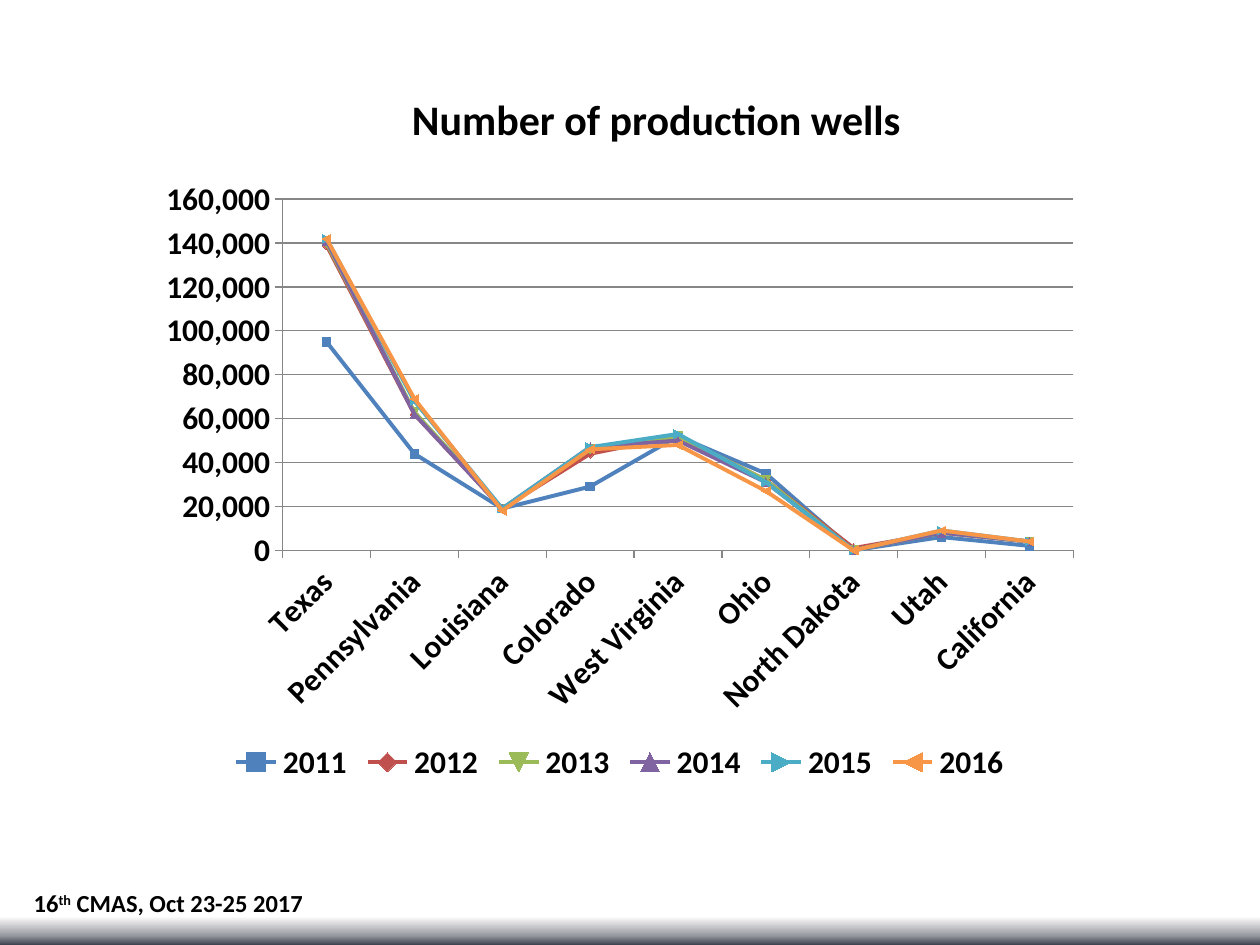
from dataclasses import dataclass

from lxml import etree
from pptx import Presentation
from pptx.chart.data import CategoryChartData
from pptx.dml.color import RGBColor
from pptx.enum.chart import XL_CHART_TYPE, XL_LEGEND_POSITION, XL_TICK_MARK
from pptx.enum.text import MSO_ANCHOR, MSO_AUTO_SIZE, PP_ALIGN
from pptx.oxml.ns import qn
from pptx.util import Cm, Pt

LINE_MARKERS = XL_CHART_TYPE.LINE_MARKERS
BOTTOM = XL_LEGEND_POSITION.BOTTOM
OUTSIDE, NO_TICK = XL_TICK_MARK.OUTSIDE, XL_TICK_MARK.NONE
MIDDLE = MSO_ANCHOR.MIDDLE
NO_FIT = MSO_AUTO_SIZE.NONE
LEFT = PP_ALIGN.LEFT

STATES = ["Texas", "Pennsylvania", "Louisiana", "Colorado", "West Virginia",
          "Ohio", "North Dakota", "Utah", "California"]
WELLS = {
    "2011": [95000, 44000, 19000, 29000, 52000, 35000, 0, 6000, 2000],
    "2012": [139000, 62000, 19000, 44000, 52000, 32000, 1000, 8000, 4000],
    "2013": [140000, 63000, 19000, 46000, 52000, 32000, 0, 8000, 4000],
    "2014": [141000, 62000, 19000, 47000, 50000, 31000, 0, 8000, 4000],
    "2015": [142000, 68000, 19000, 47000, 53000, 31000, 0, 9000, 4000],
    "2016": [142000, 69000, 18000, 46000, 48000, 27000, 0, 9000, 4000],
}


@dataclass(frozen=True)
class Theme:
    font: str = "Calibri"
    text: str = "000000"
    rule: str = "868686"
    title_size: int = 24
    chart_size: int = 18
    footer_size: int = 14
    line_width: float = 2.25
    series: tuple = ("4F81BD", "C0504D", "9BBB59", "8064A2", "4BACC6", "F79646")
    backdrop: tuple = ((0, "FFFFFF"), (93, "FFFFFF"), (97, "FEFEFE"),
                       (99, "9799A0"), (100, "3C414E"))


class Deck:
    """Holds the theme and the current slide and adds styled elements to it."""

    def __init__(self, prs, theme):
        self.theme = theme
        self.s = prs.slides.add_slide(prs.slide_layouts[5])

    def style(self, font, size):
        font.name = self.theme.font
        font.size = Pt(size)
        font.bold = True
        font.color.rgb = RGBColor.from_string(self.theme.text)

    def background(self):
        fill = self.s.background.fill
        fill.gradient()
        fill.gradient_angle = 270
        stops = next(self.s.element.iter(qn("a:gsLst")))
        for stop in list(stops):
            stops.remove(stop)
        for percent, color in self.theme.backdrop:
            stop = etree.SubElement(stops, qn("a:gs"), pos=str(percent * 1000))
            etree.SubElement(stop, qn("a:srgbClr"), val=color)

    def title(self, text, left, top, width, height):
        sp = self.s.shapes.title
        sp.left, sp.top, sp.width, sp.height = map(Cm, (left, top, width, height))
        tf = sp.text_frame
        tf.text = text
        tf.word_wrap = False
        tf.auto_size = NO_FIT
        tf.vertical_anchor = MIDDLE
        p = tf.paragraphs[0]
        p.alignment = LEFT
        self.style(p.runs[0].font, self.theme.title_size)

    def footer(self, parts, left, top, width, height):
        sp = self.s.shapes.add_textbox(*map(Cm, (left, top, width, height)))
        sp.text_frame.word_wrap = False
        p = sp.text_frame.paragraphs[0]
        for text, baseline in parts:
            r = p.add_run()
            r.text = text
            self.style(r.font, self.theme.footer_size)
            if baseline:
                r.font._element.set("baseline", str(baseline * 1000))

    def line_chart(self, categories, series, left, top, width, height):
        data = CategoryChartData(number_format="#,##0")
        data.categories = categories
        for name, values in series.items():
            data.add_series(name, values)
        frame = self.s.shapes.add_chart(
            LINE_MARKERS, *map(Cm, (left, top, width, height)), data)
        chart = frame.chart
        chart.has_title = False
        chart.has_legend = True
        chart.legend.position = BOTTOM
        chart.legend.include_in_layout = False
        self.style(chart.font, self.theme.chart_size)
        self.axes(chart)
        plot = chart.plots[0]
        plot.vary_by_categories = False
        for line, color in zip(plot.series, self.theme.series):
            rgb = RGBColor.from_string(color)
            line.smooth = False
            line.format.line.width = Pt(self.theme.line_width)
            line.format.line.color.rgb = rgb
            line.marker.format.fill.solid()
            line.marker.format.fill.fore_color.rgb = rgb
            line.marker.format.line.color.rgb = rgb

    def axes(self, chart):
        rule = RGBColor.from_string(self.theme.rule)
        value, category = chart.value_axis, chart.category_axis
        value.has_major_gridlines = True
        value.maximum_scale, value.minimum_scale = 160000, 0
        value.major_unit = 20000
        value.tick_labels.number_format = "#,##0"
        value.tick_labels.number_format_is_linked = False
        value.major_gridlines.format.line.color.rgb = rule
        for axis in (value, category):
            axis.major_tick_mark = OUTSIDE
            axis.minor_tick_mark = NO_TICK
            axis.format.line.color.rgb = rule
            self.style(axis.tick_labels.font, self.theme.chart_size)
        labels = next(chart.element.iter(qn("c:catAx")))
        next(labels.iter(qn("a:bodyPr"))).set("rot", "-2700000")


def main():
    prs = Presentation()
    prs.slide_width, prs.slide_height = Cm(25.4), Cm(19.05)
    deck = Deck(prs, Theme())
    deck.background()
    deck.line_chart(STATES, WELLS, 2.97, 3.38, 19.05, 12.5)
    deck.title("Number of production wells", 8.05, 1.75, 10.46, 1.27)
    deck.footer([("16", 0), ("th", 30), (" CMAS, Oct 23-25 2017", 0)],
                0.43, 17.78, 5.97, 0.86)
    prs.save("out.pptx")


if __name__ == "__main__":
    main()
